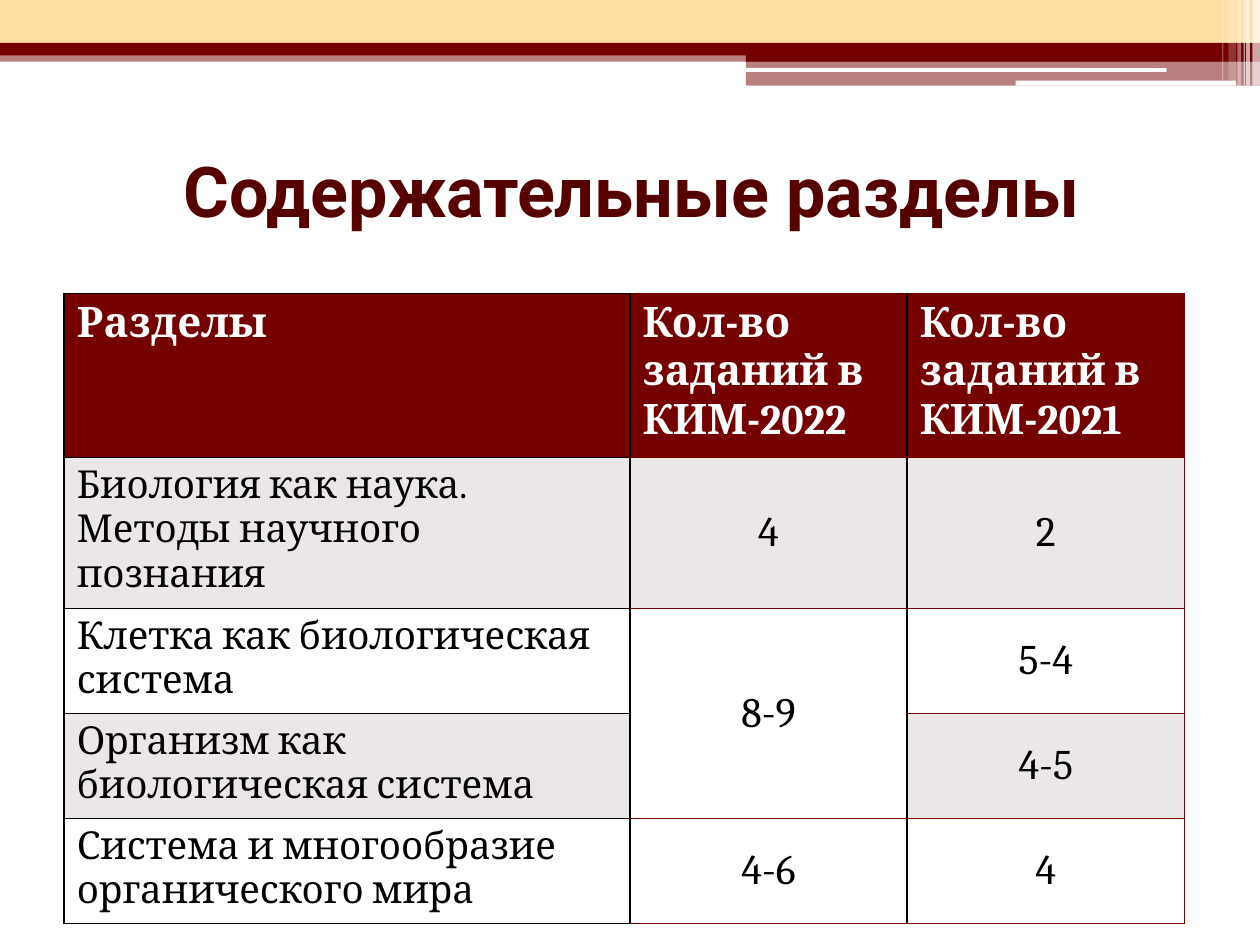
import dataclasses

import lxml.etree
import pptx
import pptx.dml.color
import pptx.enum.shapes
import pptx.enum.text
import pptx.oxml.ns
import pptx.util

Inches = pptx.util.Inches
Pt = pptx.util.Pt
Shape = pptx.enum.shapes.MSO_SHAPE
Align = pptx.enum.text.PP_ALIGN
Anchor = pptx.enum.text.MSO_ANCHOR
qn = pptx.oxml.ns.qn

COLORS = {
    "maroon": "740000",
    "title": "570000",
    "sand": "FFDEA4",
    "band": "EBE7E7",
    "white": "FFFFFF",
    "black": "000000",
}


@dataclasses.dataclass
class Bar:
    left: float
    top: float
    width: float
    height: float
    color: str = "white"
    opacity: int = 100
    rounded: bool = False


HEADER_BARS = [
    Bar(0, 0.4, 10, 0.09, "maroon", 50),
    Bar(0, 0, 10, 0.34, "sand"),
    Bar(0, 0.34, 10, 0.1, "maroon"),
    Bar(5.92, 0.39, 4.08, 0.1, "maroon"),
    Bar(5.92, 0.48, 4.08, 0.2, "maroon", 50),
    Bar(5.91, 0.54, 3.35, 0.03, rounded=True),
    Bar(8.06, 0.64, 1.75, 0.04, rounded=True),
    Bar(9.94, 0, 0.06, 0.68, opacity=65),
    Bar(9.89, 0, 0.03, 0.68, opacity=65),
    Bar(9.87, 0, 0.01, 0.68, opacity=60),
    Bar(9.82, 0, 0.03, 0.68, opacity=40),
    Bar(9.75, 0, 0.06, 0.64, opacity=20),
    Bar(9.7, 0, 0.01, 0.64, opacity=30),
]

COLUMN_WIDTHS = [4.49, 2.2, 2.2]
ROW_HEIGHTS = [1.25, 1.16, 0.8, 0.8, 0.8]
ROWS = [
    ["Разделы", "Кол-во\nзаданий в КИМ-2022", "Кол-во заданий в КИМ-2021"],
    ["Биология как наука. Методы научного познания", "4", "2"],
    ["Клетка как биологическая система", "8-9", "5-4"],
    ["Организм как биологическая система", "", "4-5"],
    ["Система и многообразие органического мира", "4-6", "4"],
]
# Left, right, top and bottom border of each column
BORDERS = [
    ["black", "black", "black", "black"],
    ["black", "black", "maroon", "maroon"],
    ["black", "maroon", "maroon", "maroon"],
]
HEAD_FONT = {"name": "Cambria", "size": Pt(24), "bold": True}
TOPIC_FONT = {"name": "Cambria", "size": Pt(22), "bold": False}
COUNT_FONT = {"name": "Cambria", "size": Pt(24), "bold": False}
TITLE_FONT = {"name": "Roboto", "size": Pt(40), "bold": True}


def rgb(color: str) -> pptx.dml.color.RGBColor:
    return pptx.dml.color.RGBColor.from_string(COLORS[color])


def write_text(tf, text: str, font: dict, color: str, align) -> None:
    tf.text = text
    for p in tf.paragraphs:
        p.alignment = align
        for r in p.runs:
            for name, value in font.items():
                setattr(r.font, name, value)
            r.font.color.rgb = rgb(color)


def draw_bar(slide, bar: Bar) -> None:
    kind = Shape.ROUNDED_RECTANGLE if bar.rounded else Shape.RECTANGLE
    box = (bar.left, bar.top, bar.width, bar.height)
    sp = slide.shapes.add_shape(kind, *map(Inches, box))
    sp.shadow.inherit = False
    sp.line.fill.background()
    sp.fill.solid()
    sp.fill.fore_color.rgb = rgb(bar.color)
    if bar.opacity < 100:
        clr = sp._element.spPr.find(f"{qn('a:solidFill')}/{qn('a:srgbClr')}")
        lxml.etree.SubElement(clr, qn("a:alpha"), val=str(bar.opacity * 1000))


def draw_title(slide, text: str) -> None:
    sp = slide.shapes.add_textbox(Inches(0.51), Inches(0.92), Inches(9), Inches(1.17))
    tf = sp.text_frame
    tf.word_wrap = True
    tf.vertical_anchor = Anchor.MIDDLE
    write_text(tf, text, TITLE_FONT, "title", Align.CENTER)


def set_borders(cell, colors: list[str]) -> None:
    """Put the border lines ahead of the cell fill, as the schema asks."""
    tc_pr = cell._tc.get_or_add_tcPr()
    for i, (side, color) in enumerate(zip("LRTB", colors)):
        ln = lxml.etree.Element(qn(f"a:ln{side}"), w=str(Pt(1)))
        fill = lxml.etree.SubElement(ln, qn("a:solidFill"))
        lxml.etree.SubElement(fill, qn("a:srgbClr"), val=COLORS[color])
        tc_pr.insert(i, ln)


def format_cell(cell, row: int, col: int) -> None:
    header, count = row == 0, row > 0 and col > 0
    font = HEAD_FONT if header else COUNT_FONT if count else TOPIC_FONT
    write_text(cell.text_frame, ROWS[row][col], font,
               "white" if header else "black",
               Align.CENTER if count else Align.LEFT)
    cell.vertical_anchor = Anchor.MIDDLE if count else Anchor.TOP
    cell.fill.solid()
    cell.fill.fore_color.rgb = rgb("maroon" if header else "band" if row % 2 else "white")
    set_borders(cell, BORDERS[col])


def draw_table(slide) -> None:
    table = slide.shapes.add_table(
        len(ROWS), len(COLUMN_WIDTHS), Inches(0.51), Inches(2.33),
        Inches(sum(COLUMN_WIDTHS)), Inches(sum(ROW_HEIGHTS))).table
    for column, width in zip(table.columns, COLUMN_WIDTHS):
        column.width = Inches(width)
    for row, height in zip(table.rows, ROW_HEIGHTS):
        row.height = Inches(height)
    for row in range(len(ROWS)):
        for col in range(len(COLUMN_WIDTHS)):
            format_cell(table.cell(row, col), row, col)
    table.cell(2, 1).merge(table.cell(3, 1))


def main() -> None:
    prs = pptx.Presentation()
    prs.slide_width, prs.slide_height = Inches(10), Inches(7.5)
    s = prs.slides.add_slide(prs.slide_layouts[6])
    for bar in HEADER_BARS:
        draw_bar(s, bar)
    draw_title(s, "Содержательные разделы")
    draw_table(s)
    prs.save("out.pptx")


if __name__ == "__main__":
    main()
